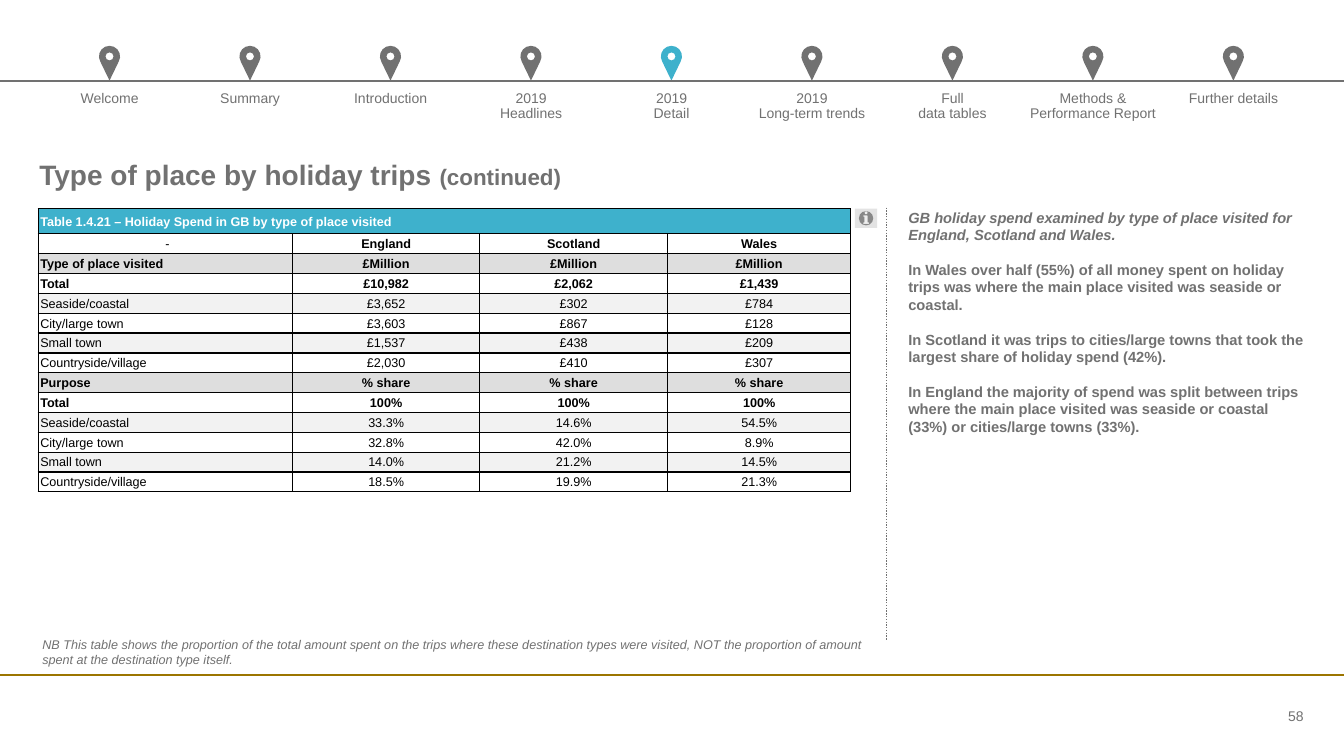
import math
from lxml import etree
from pptx import Presentation
from pptx import util as u
from pptx.dml.color import RGBColor
from pptx.enum import dml, shapes, text
from pptx.oxml.ns import qn

GREY = RGBColor(0x71, 0x71, 0x71)
TEAL = RGBColor(0x3E, 0xB1, 0xCC)
GOLD = RGBColor(0x9C, 0x75, 0x00)
BLACK = RGBColor(0, 0, 0)
WHITE = RGBColor(0xFF, 0xFF, 0xFF)
BAND = RGBColor(0xDE, 0xDE, 0xDE)
PALE = RGBColor(0xF2, 0xF2, 0xF2)
BUTTON = RGBColor(0xE3, 0xE3, 0xE3)

LEFT, CENTER, RIGHT = text.PP_ALIGN.LEFT, text.PP_ALIGN.CENTER, text.PP_ALIGN.RIGHT
TOP, MIDDLE, BOTTOM = text.MSO_ANCHOR.TOP, text.MSO_ANCHOR.MIDDLE, text.MSO_ANCHOR.BOTTOM

NAV_LEFT, NAV_WIDTH = 0.39, 12.54
NAV = ["Welcome", "Summary", "Introduction", "2019\nHeadlines", "2019\nDetail",
       "2019\nLong-term trends", "Full\vdata tables",
       "Methods & Performance Report", "Further details"]
ACTIVE = 4

CAPTION = "Table 1.4.21 – Holiday Spend in GB by type of place visited"
ROWS = [
    [" -", "England", "Scotland", "Wales"],
    ["Type of place visited"] + ["£Million"] * 3,
    ["Total", "£10,982", "£2,062", "£1,439"],
    ["Seaside/coastal", "£3,652", "£302", "£784"],
    ["City/large town", "£3,603", "£867", "£128"],
    ["Small town", "£1,537", "£438", "£209"],
    ["Countryside/village", "£2,030", "£410", "£307"],
    ["Purpose"] + ["% share"] * 3,
    ["Total"] + ["100%"] * 3,
    ["Seaside/coastal", "33.3%", "14.6%", "54.5%"],
    ["City/large town", "32.8%", "42.0%", "8.9%"],
    ["Small town", "14.0%", "21.2%", "14.5%"],
    ["Countryside/village", "18.5%", "19.9%", "21.3%"],
]
FILLS = {"Type of place visited": BAND, "Purpose": BAND,
         "Seaside/coastal": PALE, "Small town": PALE}
STRONG = ("Type of place visited", "Purpose", "Total")

NOTES = [
    "GB holiday spend examined by type of place visited for England, Scotland and Wales.",
    "In Wales over half (55%) of all money spent on holiday trips was where the main "
    "place visited was seaside or coastal.",
    "In Scotland it was trips to cities/large towns that took the largest share of "
    "holiday spend (42%).",
    "In England the majority of spend was split between trips where the main place "
    "visited was seaside or coastal (33%) or cities/large towns (33%).",
]
CAVEAT = ("NB This table shows the proportion of the total amount spent on the trips where "
          "these destination types were visited, NOT the proportion of amount spent at the "
          "destination type itself.")


def style(para, size, color=GREY, bold=False, italic=False, align=LEFT):
    para.alignment = align
    for run in para.runs:
        font = run.font
        font.name, font.size = "Arial", u.Pt(size)
        font.bold, font.italic = bold, italic
        font.color.rgb = color


def inset(frame, anchor):
    frame.margin_left = frame.margin_right = 0
    frame.margin_top = frame.margin_bottom = 0
    frame.word_wrap = True
    frame.vertical_anchor = anchor


def place(shape, x, y, w, h):
    shape.left, shape.top = u.Inches(x), u.Inches(y)
    shape.width, shape.height = u.Inches(w), u.Inches(h)


def add_text(slide, box, paras, size, anchor=TOP, **look):
    frame = slide.shapes.add_textbox(*map(u.Inches, box)).text_frame
    inset(frame, anchor)
    frame.text = "\n".join(paras)
    for i, para in enumerate(frame.paragraphs):
        style(para, size, **look)
        if i:
            para.space_before = u.Pt(12)
    return frame


def add_line(slide, start, end, color, width, dash=None):
    line = slide.shapes.add_connector(
        shapes.MSO_CONNECTOR.STRAIGHT, *map(u.Inches, start + end))
    line.line.color.rgb = color
    line.line.width = u.Pt(width)
    if dash:
        line.line.dash_style = dash
    etree.SubElement(line._element.spPr, qn("a:effectLst"))


def arc(x, y, radius, first, last, steps):
    turns = [math.radians(first + (last - first) * i / steps) for i in range(steps + 1)]
    return [(u.Inches(x + radius * math.cos(t)), u.Inches(y + radius * math.sin(t)))
            for t in turns]


def add_pin(slide, x, color):
    head = arc(x, 0.56, 0.105, 150, 390, 10)
    hole = arc(x, 0.56, 0.04, 360, 0, 8)
    form = slide.shapes.build_freeform(u.Inches(x), u.Inches(0.8))
    form.add_line_segments(head, close=True)
    form.move_to(*hole[0])
    form.add_line_segments(hole[1:-1], close=True)
    pin = form.convert_to_shape()
    pin.fill.solid()
    pin.fill.fore_color.rgb = color
    pin.line.fill.background()
    pin.shadow.inherit = False


def add_grid(slide, box, count, widths, heights):
    grid = slide.shapes.add_table(count, len(widths), *map(u.Inches, box)).table
    grid.first_row = grid.horz_banding = False
    for col, width in zip(grid.columns, widths):
        col.width = u.Inches(width)
    for row, height in zip(grid.rows, heights):
        row.height = u.Inches(height)
    return grid


def pad(cell, left, right, top):
    cell.margin_left, cell.margin_right = u.Inches(left), u.Inches(right)
    cell.margin_top, cell.margin_bottom = u.Inches(top), 0


def border(cell):
    props = cell._tc.get_or_add_tcPr()
    for i, side in enumerate(("lnL", "lnR", "lnT", "lnB")):
        line = etree.Element(qn("a:" + side), w=str(u.Pt(1)))
        fill = etree.SubElement(line, qn("a:solidFill"))
        etree.SubElement(fill, qn("a:srgbClr"), val=str(BLACK))
        props.insert(i, line)


def fill_cell(cell, words, fill, color, bold, align, left):
    cell.text_frame.text = words
    style(cell.text_frame.paragraphs[0], 9, color, bold, align=align)
    cell.vertical_anchor = MIDDLE
    pad(cell, left, 0.01, 0.01)
    cell.fill.solid()
    cell.fill.fore_color.rgb = fill


def add_nav(slide):
    step = NAV_WIDTH / len(NAV)
    grid = add_grid(slide, (NAV_LEFT, 0.9, NAV_WIDTH, 0.35), 1, [step] * len(NAV), [0.35])
    for i, label in enumerate(NAV):
        cell = grid.cell(0, i)
        cell.text_frame.text = label
        for para in cell.text_frame.paragraphs:
            style(para, 10, align=CENTER)
        pad(cell, 0, 0, 0)
        cell.fill.background()
        add_pin(slide, NAV_LEFT + step * (i + 0.5), TEAL if i == ACTIVE else GREY)
    add_line(slide, (0, 0.8), (13.33, 0.8), GREY, 1.25)


def add_title(slide):
    title = slide.shapes.title
    place(title, 0.39, 1.55, 12.52, 0.35)
    inset(title.text_frame, BOTTOM)
    para = title.text_frame.paragraphs[0]
    para.text = "Type of place by holiday trips "
    para.add_run().text = "(continued)"
    style(para, 20, bold=True)
    para.runs[1].font.size = u.Pt(16)


def add_spend(slide):
    heights = [0.25] + [2.56 / len(ROWS)] * len(ROWS)
    grid = add_grid(slide, (0.38, 2.07, 8.06, 2.81), len(heights),
                    [2.52, 1.86, 1.86, 1.82], heights)
    grid.cell(0, 0).merge(grid.cell(0, 3))
    fill_cell(grid.cell(0, 0), CAPTION, TEAL, WHITE, True, LEFT, 0.02)
    for r, row in enumerate(ROWS, 1):
        for c, words in enumerate(row):
            bold = row[0] in STRONG or (r == 1 and c > 0)
            align = LEFT if c == 0 and r > 1 else CENTER
            fill_cell(grid.cell(r, c), words, FILLS.get(row[0], WHITE), BLACK,
                      bold, align, 0.01 if c else 0.02)
    for cell in grid.iter_cells():
        border(cell)


def add_info(slide):
    info = slide.shapes.add_shape(shapes.MSO_SHAPE.ACTION_BUTTON_INFORMATION,
                                  *map(u.Inches, (8.48, 2.07, 0.22, 0.19)))
    info.fill.solid()
    info.fill.fore_color.rgb = BUTTON
    info.line.fill.background()
    info.shadow.inherit = False


def main():
    deck = Presentation()
    deck.slide_width, deck.slide_height = u.Inches(13.33), u.Inches(7.5)
    slide = deck.slides.add_slide(deck.slide_layouts[5])
    add_line(slide, (0, 6.7), (13.33, 6.7), GOLD, 1.5)
    add_nav(slide)
    add_title(slide)
    add_spend(slide)
    notes = add_text(slide, (9.01, 2.07, 3.93, 4.18), NOTES, 10.5, bold=True)
    notes.paragraphs[0].runs[0].font.italic = True
    add_line(slide, (8.79, 2.06), (8.79, 6.35), GREY, 1, dml.MSO_LINE.ROUND_DOT)
    add_info(slide)
    add_text(slide, (0.42, 6.32, 8.22, 0.65), [CAVEAT], 9, italic=True)
    add_text(slide, (11.87, 6.99, 1.06, 0.22), ["58"], 10, MIDDLE, align=RIGHT)
    deck.save("out.pptx")


if __name__ == "__main__":
    main()
